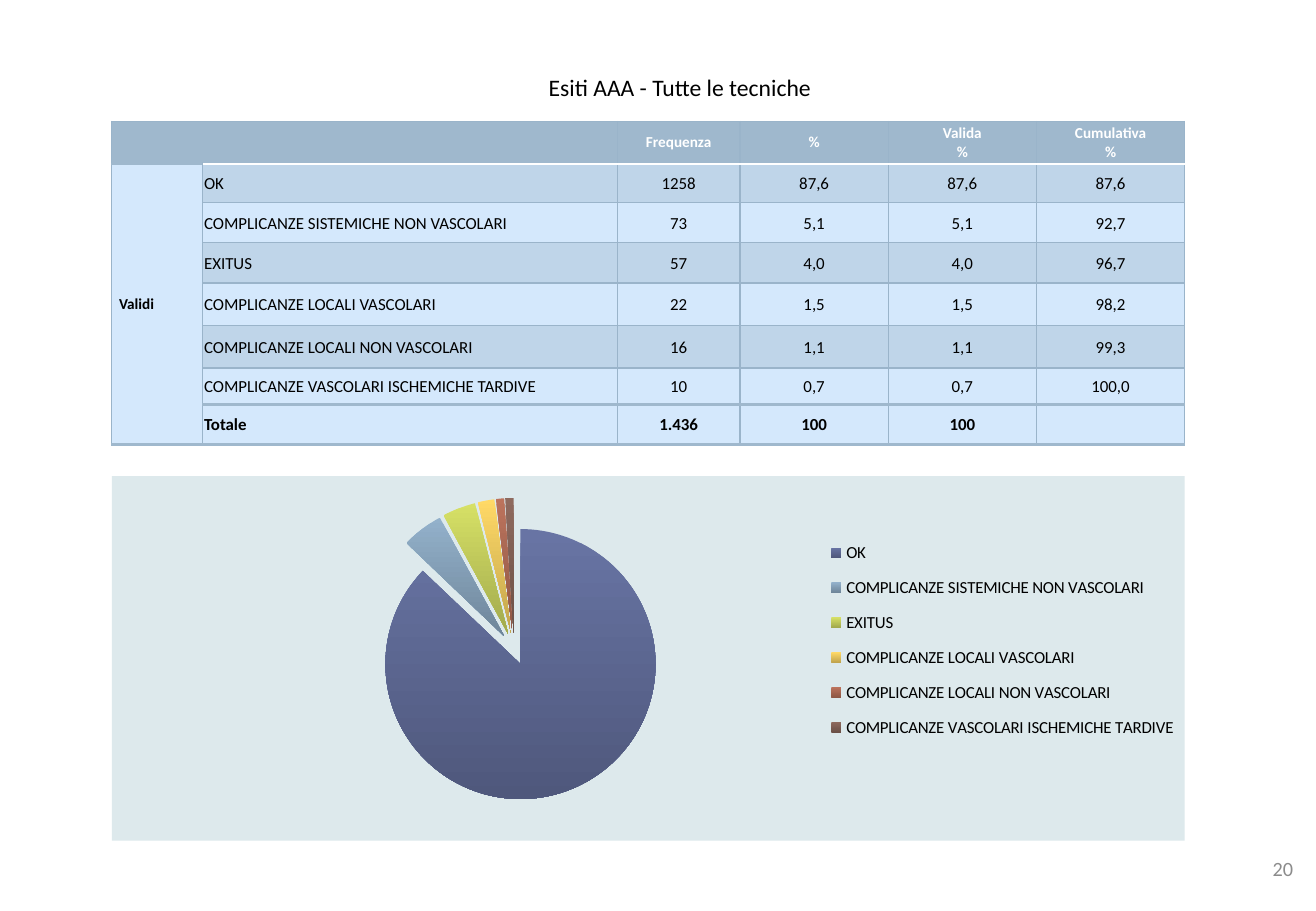
from lxml import etree
from pptx import Presentation
from pptx.chart.data import CategoryChartData
from pptx.dml.color import RGBColor
from pptx.enum.chart import XL_CHART_TYPE, XL_LEGEND_POSITION
from pptx.enum.text import MSO_ANCHOR, PP_ALIGN
from pptx.oxml import parse_xml
from pptx.oxml.ns import nsdecls, qn
from pptx.util import Inches, Pt

FONT = "Calibri"
COLORS = {
    "text": "000000", "white": "FFFFFF", "page": "8C8C8C",
    "header": "9FB8CD", "band": "BFD5E9", "plain": "D4E8FC",
    "grid": "9AB4CA", "panel": "DDE9EC",
}
SLICES = ["6874A4", "93B1CB", "D6E066", "FFD966", "BC735C", "8E6A5E"]
COL_WIDTHS = [0.75, 3.41, 1.01, 1.22, 1.22, 1.22]
ROW_HEIGHTS = [0.35, 0.32, 0.33, 0.33, 0.35, 0.35, 0.3, 0.33]
HEADER = ["", "", "Frequenza", "%", "Valida\n%", "Cumulativa\n%"]
OUTCOMES = [
    ["OK", "1258", "87,6", "87,6", "87,6"],
    ["COMPLICANZE SISTEMICHE NON VASCOLARI", "73", "5,1", "5,1", "92,7"],
    ["EXITUS", "57", "4,0", "4,0", "96,7"],
    ["COMPLICANZE LOCALI VASCOLARI", "22", "1,5", "1,5", "98,2"],
    ["COMPLICANZE LOCALI NON VASCOLARI", "16", "1,1", "1,1", "99,3"],
    ["COMPLICANZE VASCOLARI ISCHEMICHE TARDIVE", "10", "0,7", "0,7", "100,0"],
]
TOTAL = ["Totale", "1.436", "100", "100", ""]


def rgb(name):
    return RGBColor.from_string(COLORS[name])


def style_text(tf, size, color="text", bold=False, align=PP_ALIGN.LEFT):
    for p in tf.paragraphs:
        p.alignment = align
        for r in p.runs:
            r.font.name = FONT
            r.font.size = Pt(size)
            r.font.bold = bold
            r.font.color.rgb = rgb(color)


def add_text(s, box, text, size, color, align):
    tf = s.shapes.add_textbox(*map(Inches, box)).text_frame
    tf.word_wrap = True
    tf.vertical_anchor = MSO_ANCHOR.MIDDLE
    tf.text = text
    style_text(tf, size, color, align=align)


def set_borders(cell, top, bottom):
    """Draw thin sides; top and bottom are (colour name, points)."""
    thin = ("grid", 0.75)
    tc_pr = cell._tc.get_or_add_tcPr()
    for side, (color, width) in zip("LRTB", (thin, thin, top, bottom)):
        tc_pr.append(parse_xml(
            f'<a:ln{side} {nsdecls("a")} w="{Pt(width)}"><a:solidFill>'
            f'<a:srgbClr val="{COLORS[color]}"/></a:solidFill></a:ln{side}>'))


def row_borders(row, col):
    thin, thick, white = ("grid", 0.75), ("header", 2), ("white", 2)
    under_header = white if col else thick
    if row and not col:
        return thick, thick
    last = len(ROW_HEIGHTS) - 1
    top = {1: under_header, last: thick}.get(row, thin)
    bottom = {0: under_header, last - 1: thick, last: thick}.get(row, thin)
    return top, bottom


def fill_cell(cell, row, col, text):
    total = row == len(ROW_HEIGHTS) - 1
    set_borders(cell, *row_borders(row, col))
    banded = row % 2 == 1 and col > 0 and not total
    fill = "header" if row == 0 else "band" if banded else "plain"
    cell.fill.solid()
    cell.fill.fore_color.rgb = rgb(fill)
    cell.vertical_anchor = MSO_ANCHOR.MIDDLE
    cell.margin_left = cell.margin_right = Inches(0.01 if col else 0.06)
    cell.margin_top = Inches(0.01 if row and col else 0)
    cell.margin_bottom = 0
    cell.text_frame.text = text
    style_text(cell.text_frame, 9 if row == 0 or col == 0 else 10,
               "text" if row else "white", row == 0 or col == 0 or total,
               PP_ALIGN.CENTER if col > 1 else PP_ALIGN.LEFT)


def add_outcome_table(s):
    rows = [HEADER] + [["", *row] for row in OUTCOMES + [TOTAL]]
    rows[1][0] = "Validi"
    table = s.shapes.add_table(len(rows), len(HEADER), Inches(0.92), Inches(1),
                               Inches(8.83), Inches(2.67)).table
    for column, width in zip(table.columns, COL_WIDTHS):
        column.width = Inches(width)
    for line, height in zip(table.rows, ROW_HEIGHTS):
        line.height = Inches(height)
    for i, row in enumerate(rows):
        for j, text in enumerate(row):
            fill_cell(table.cell(i, j), i, j, text)
    table.cell(0, 0).merge(table.cell(0, 1))
    table.cell(1, 0).merge(table.cell(len(rows) - 1, 0))


def chart_layout(x, y, w, h, inner=False):
    target = '<c:layoutTarget val="inner"/>' if inner else ""
    return parse_xml(
        f'<c:layout {nsdecls("c")}><c:manualLayout>{target}'
        '<c:xMode val="edge"/><c:yMode val="edge"/>'
        f'<c:x val="{x}"/><c:y val="{y}"/><c:w val="{w}"/><c:h val="{h}"/>'
        '</c:manualLayout></c:layout>')


def replace_layout(parent, layout, index):
    for old in parent.findall(qn("c:layout")):
        parent.remove(old)
    parent.insert(index, layout)


def shade_slice(point, color):
    light = RGBColor.from_string(color)
    fill = point.format.fill
    fill.gradient()
    fill.gradient_angle = 270
    fill.gradient_stops[0].color.rgb = light
    fill.gradient_stops[1].color.rgb = RGBColor(*(int(c * 0.76) for c in light))


def add_outcome_pie(s):
    data = CategoryChartData()
    data.categories = [row[0] for row in OUTCOMES]
    data.add_series("Series 1",
                    [round(float(row[2].replace(",", "."))) for row in OUTCOMES])
    chart = s.shapes.add_chart(XL_CHART_TYPE.PIE, Inches(0.92), Inches(3.92),
                               Inches(8.83), Inches(3), data).chart
    chart.has_title = False
    chart.font.name = FONT
    chart.font.size = Pt(10)
    chart.font.color.rgb = rgb("text")
    chart.has_legend = True
    chart.legend.position = XL_LEGEND_POSITION.RIGHT
    chart.legend.include_in_layout = False

    series = chart.plots[0].series[0]
    for i, color in enumerate(SLICES):
        shade_slice(series.points[i], color)
    explosion = etree.Element(qn("c:explosion"), val="12")
    series._element.find(qn("c:dPt")).addprevious(explosion)

    space = chart._chartSpace
    space.find(qn("c:txPr")).addprevious(parse_xml(
        f'<c:spPr {nsdecls("c", "a")}><a:solidFill><a:srgbClr '
        f'val="{COLORS["panel"]}"/></a:solidFill><a:ln><a:noFill/></a:ln></c:spPr>'))
    replace_layout(space.chart.plotArea,
                   chart_layout(0, 0.06, 0.75, 0.83, inner=True), 0)
    replace_layout(chart.legend._element, chart_layout(0.66, 0.14, 0.34, 0.62), 1)


def main():
    prs = Presentation()
    prs.slide_width, prs.slide_height = Inches(10.83), Inches(7.5)
    s = prs.slides.add_slide(prs.slide_layouts[6])
    add_text(s, (9.86, 6.95, 0.88, 0.4), "20", 12, "page", PP_ALIGN.RIGHT)
    add_text(s, (0.72, 0.52, 9.75, 0.4), "Esiti AAA - Tutte le tecniche",
             14, "text", PP_ALIGN.CENTER)
    add_outcome_table(s)
    add_outcome_pie(s)
    prs.save("out.pptx")


if __name__ == "__main__":
    main()
